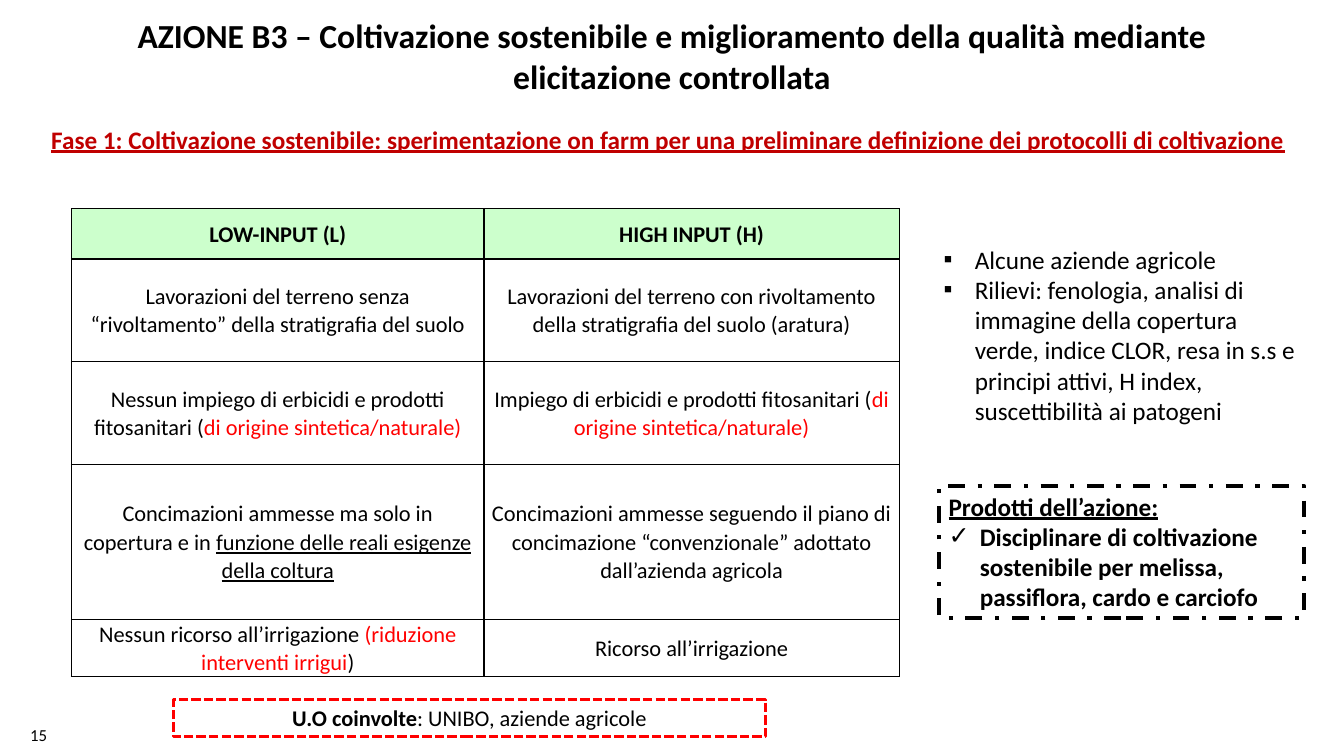
from lxml import etree
from pptx import Presentation
from pptx import util as u
from pptx.dml.color import RGBColor
from pptx.enum import dml, shapes, text
from pptx.oxml.ns import qn

PX = 9144  # 100 px to the inch
BLACK = RGBColor(0x00, 0x00, 0x00)
RED = RGBColor(0xFF, 0x00, 0x00)
DARK_RED = RGBColor(0xC0, 0x00, 0x00)
PALE_GREEN = RGBColor(0xCC, 0xFF, 0xCC)
WHITE = RGBColor(0xFF, 0xFF, 0xFF)
FONT = "Calibri"
CENTER = text.PP_ALIGN.CENTER
LEFT = text.PP_ALIGN.LEFT

COLUMNS = (409, 412)
ROWS = (50, 102, 102, 154, 50)
PRACTICES = [
    [[("LOW-INPUT (L)", {"bold": True})],
     [("HIGH INPUT (H)", {"bold": True})]],
    [[("Lavorazioni del terreno senza “rivoltamento” della stratigrafia del suolo", {})],
     [("Lavorazioni del terreno con rivoltamento della stratigrafia del suolo (aratura)", {})]],
    [[("Nessun impiego di erbicidi e prodotti fitosanitari (", {}),
      ("di origine sintetica/naturale)", {"color": RED})],
     [("Impiego di erbicidi e prodotti fitosanitari (", {}),
      ("di origine sintetica/naturale)", {"color": RED})]],
    [[("Concimazioni ammesse ma solo in copertura e in ", {}),
      ("funzione delle reali esigenze della coltura", {"underline": True})],
     [("Concimazioni ammesse seguendo il piano di concimazione “convenzionale” "
       "adottato dall’azienda agricola", {})]],
    [[("Nessun ricorso all’irrigazione ", {}),
      ("(riduzione interventi irrigui", {"color": RED}),
      (")", {})],
     [("Ricorso all’irrigazione", {})]],
]


def emu(box):
    return [length * PX for length in box]


def add_span(para, words, size, color=BLACK, bold=False, underline=False):
    span = para.add_run()
    span.text = words
    font = span.font
    font.name, font.size = FONT, u.Pt(size)
    font.bold, font.underline = bold, underline
    font.color.rgb = color


def set_bullet(para, symbol, indent=31):
    props = para._p.get_or_add_pPr()
    props.set("marL", str(indent * PX))
    props.set("indent", str(-indent * PX))
    etree.SubElement(props, qn("a:buFont")).set("typeface", "Arial")
    etree.SubElement(props, qn("a:buChar")).set("char", symbol)


def fill_frame(frame, paras, size, align=LEFT, wrap=True):
    """Write paras, each a (bullet, spans) pair, into a text frame."""
    frame.word_wrap = wrap
    frame.auto_size = text.MSO_AUTO_SIZE.NONE
    frame.vertical_anchor = text.MSO_ANCHOR.TOP
    for index, (bullet, spans) in enumerate(paras):
        para = frame.add_paragraph() if index else frame.paragraphs[0]
        if bullet:
            set_bullet(para, bullet)
        para.alignment = align
        for words, style in spans:
            add_span(para, words, size, **style)


def add_title(page, box, words):
    title = page.shapes.title
    title.left, title.top, title.width, title.height = emu(box)
    fill_frame(title.text_frame, [(None, [(words, {"bold": True})])], 24, CENTER)


def add_text(page, box, paras, size, **layout):
    label = page.shapes.add_textbox(*emu(box))
    fill_frame(label.text_frame, paras, size, **layout)


def add_dashed_box(page, box, paras, size, color, width, dash, align=LEFT):
    frame = page.shapes.add_shape(shapes.MSO_SHAPE.RECTANGLE, *emu(box))
    frame.shadow.inherit = False
    frame.fill.background()
    frame.line.color.rgb = color
    frame.line.width = u.Pt(width)
    frame.line.dash_style = dash
    fill_frame(frame.text_frame, paras, size, align)


def set_borders(cell, color, width):
    props = cell._tc.get_or_add_tcPr()
    for index, side in enumerate(("a:lnL", "a:lnR", "a:lnT", "a:lnB")):
        line = etree.Element(qn(side), w=str(u.Pt(width)))
        fill = etree.SubElement(line, qn("a:solidFill"))
        etree.SubElement(fill, qn("a:srgbClr")).set("val", str(color))
        props.insert(index, line)


def add_practice_table(page, left, top):
    box = (left, top, sum(COLUMNS), sum(ROWS))
    table = page.shapes.add_table(len(ROWS), len(COLUMNS), *emu(box)).table
    table.horz_banding = False
    for column, width in zip(table.columns, COLUMNS):
        column.width = width * PX
    for row, height, practices in zip(table.rows, ROWS, PRACTICES):
        row.height = height * PX
        for cell, spans in zip(row.cells, practices):
            cell.margin_left = cell.margin_right = 7 * PX
            cell.margin_top = cell.margin_bottom = 0
            cell.vertical_anchor = text.MSO_ANCHOR.MIDDLE
            cell.fill.solid()
            cell.fill.fore_color.rgb = PALE_GREEN if practices is PRACTICES[0] else WHITE
            set_borders(cell, BLACK, 1)
            para = cell.text_frame.paragraphs[0]
            para.alignment = CENTER
            para.line_spacing = 1.04
            para.space_after = u.Pt(8)
            for words, style in spans:
                add_span(para, words, 16, **style)


def build_page(deck):
    page = deck.slides.add_slide(deck.slide_layouts[5])
    add_title(page, (71, 10, 1191, 91),
              "AZIONE B3 – Coltivazione sostenibile e miglioramento della qualità "
              "mediante elicitazione controllata")
    add_text(page, (41, 118, 1252, 40), [
        (None, [("Fase 1: Coltivazione sostenibile: sperimentazione on farm per una "
                 "preliminare definizione dei protocolli di coltivazione",
                 {"color": DARK_RED, "bold": True, "underline": True})]),
    ], 18, wrap=False)
    add_practice_table(page, 71, 207)
    add_text(page, (926, 237, 371, 192), [
        ("▪", [("Alcune aziende agricole", {})]),
        ("▪", [("Rilievi: fenologia, analisi di immagine della copertura verde, indice "
                "CLOR, resa in s.s e principi attivi, H index, suscettibilità ai "
                "patogeni", {})]),
    ], 18)
    add_dashed_box(page, (931, 482, 362, 131), [
        (None, [("Prodotti dell’azione:", {"bold": True, "underline": True})]),
        ("✓", [("Disciplinare di coltivazione sostenibile per melissa, passiflora, "
                "cardo e carciofo", {"bold": True})]),
    ], 18, BLACK, 3, dml.MSO_LINE.DASH_DOT)
    add_dashed_box(page, (172, 694, 587, 37), [
        (None, [("U.O coinvolte", {"bold": True}), (": UNIBO, aziende agricole", {})]),
    ], 16, RED, 2.25, dml.MSO_LINE.SQUARE_DOT, CENTER)
    add_text(page, (20, 714, 87, 30), [(None, [("15", {})])], 12)


def main():
    deck = Presentation()
    deck.slide_width, deck.slide_height = emu((1333, 750))
    build_page(deck)
    deck.save("out.pptx")


if __name__ == "__main__":
    main()
